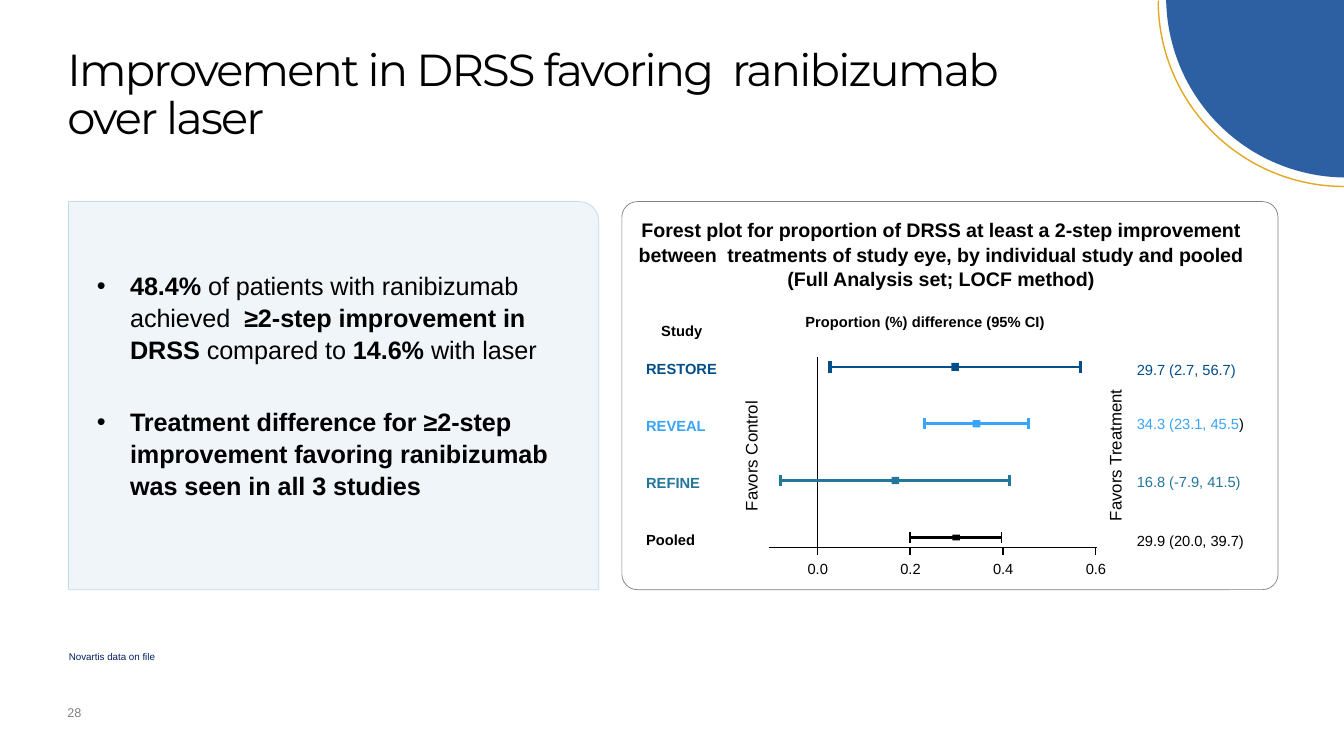
from pptx import Presentation
from pptx.dml.color import RGBColor
from pptx.enum.shapes import MSO_CONNECTOR, MSO_SHAPE
from pptx.enum.text import MSO_ANCHOR, PP_ALIGN
from pptx.oxml import parse_xml
from pptx.oxml.ns import nsdecls, qn
from pptx.util import Pt
from lxml import etree

STRAIGHT = MSO_CONNECTOR.STRAIGHT
CENTER = PP_ALIGN.CENTER
MIDDLE = MSO_ANCHOR.MIDDLE

COLORS = {
    "black": "000000", "white": "FFFFFF", "gray": "808080", "page": "7F7F7F",
    "navy": "002060", "circle": "2D5FA3", "gold": "E4A720",
    "pale": "EBF2F8", "pale line": "C2D9EA",
    "restore": "034E88", "reveal": "39A4F9", "refine": "24769B",
}
COLORS = {name: RGBColor.from_string(value) for name, value in COLORS.items()}

presentation = Presentation()
presentation.slide_width = Pt(960)
presentation.slide_height = Pt(540)
slide = presentation.slides.add_slide(presentation.slide_layouts[6])


def add_text(box, paragraphs, size, color="black", spacing=0, rotation=0,
             font_name="Arial", bold=False, frame_format=None, paragraph_format=None):
    """Each paragraph is a list of (text, format) runs; box is left, top, width, height."""
    shape = slide.shapes.add_textbox(*map(Pt, box))
    shape.rotation = rotation
    frame = shape.text_frame
    margins = dict.fromkeys(("margin_left", "margin_top", "margin_right", "margin_bottom"), 0)
    for name, value in {**margins, "word_wrap": True, **(frame_format or {})}.items():
        setattr(frame, name, value)
    for index, runs in enumerate(paragraphs):
        paragraph = frame.add_paragraph() if index else frame.paragraphs[0]
        for name, value in {"line_spacing": 1.05, **(paragraph_format or {})}.items():
            setattr(paragraph, name, value)
        for text, run_format in runs:
            run = paragraph.add_run()
            run.text = text
            font_format = {"name": font_name, "size": Pt(size), "bold": bold, **run_format}
            for name, value in font_format.items():
                setattr(run.font, name, value)
            run.font.color.rgb = COLORS[color]
            if spacing:
                run._r.get_or_add_rPr().set("spc", str(spacing))
    return frame


def add_line(x1, y1, x2, y2, color, width):
    line = slide.shapes.add_connector(STRAIGHT, Pt(x1), Pt(y1), Pt(x2), Pt(y2))
    line.line.color.rgb = COLORS[color]
    line.line.width = Pt(width)
    etree.SubElement(line._element.spPr, qn("a:effectLst"))


# Panels and corner decoration: preset, box, adjustments, fill, line, line width
BACKGROUND = [
    (MSO_SHAPE.ROUNDED_RECTANGLE, (444.2, 144, 468.7, 277.2), (0.04,), "white", "gray", 0.5),
    (MSO_SHAPE.PIE, (833, -131, 257.8, 257.8), (54, 108), "circle", None, 0),
    (MSO_SHAPE.ARC, (827.3, -132.5, 265.7, 265.7), (54, 108), None, "gold", 1),
    (MSO_SHAPE.ROUND_1_RECTANGLE, (48.9, 144, 378.8, 277.2), (0.05,), "pale", "pale line", 0.5),
]
for preset, box, adjustments, fill, line, width in BACKGROUND:
    shape = slide.shapes.add_shape(preset, *map(Pt, box))
    shape.shadow.inherit = False
    for index, value in enumerate(adjustments):
        shape.adjustments[index] = value
    if fill:
        shape.fill.solid()
        shape.fill.fore_color.rgb = COLORS[fill]
    else:
        shape.fill.background()
    if line:
        shape.line.color.rgb = COLORS[line]
        shape.line.width = Pt(width)
    else:
        shape.line.fill.background()
    if fill == "pale":
        color_element = shape._element.spPr.find(".//" + qn("a:srgbClr"))
        etree.SubElement(color_element, qn("a:alpha"), val="77000")

# Title, footnote and page number
add_text((48.2, 14.4, 695.5, 108),
         [[("Improvement in DRSS favoring  ranibizumab over laser", {})]],
         32, spacing=-130, font_name="Montserrat",
         frame_format={"vertical_anchor": MIDDLE}, paragraph_format={"line_spacing": 0.9})
add_text((49.2, 464.4, 80, 8.6), [[("Novartis data on file", {})]], 7, "navy")
add_text((48.2, 503.3, 23.8, 31), [[("28", {})]], 9, "page")

# Key findings
BOLD = {"bold": True}
findings = add_text((43.9, 192.2, 354.2, 160.6), [
    [("48.4% ", BOLD), ("of patients with ranibizumab achieved  ", {}),
     ("≥2-step improvement in DRSS ", BOLD), ("compared to ", {}),
     ("14.6% ", BOLD), ("with laser", {})],
    [("Treatment difference for ≥2-step improvement favoring ranibizumab "
      "was seen in all 3 studies", BOLD)],
], 18, spacing=-5)
for paragraph in findings.paragraphs:
    properties = paragraph._p.get_or_add_pPr()
    properties.set("marL", str(Pt(49)))
    properties.set("indent", str(Pt(-23.8)))
    properties.append(parse_xml(f'<a:buFont {nsdecls("a")} typeface="Arial"/>'))
    properties.append(parse_xml(f'<a:buChar {nsdecls("a")} char="•"/>'))
findings.paragraphs[1].space_before = Pt(29)

# Forest plot headings
add_text((450, 154.8, 444.2, 51), [
    [("Forest plot for proportion of DRSS at least a 2-step improvement "
      "between  treatments of study eye, by individual study and pooled", {})],
    [("(Full Analysis set; LOCF method)", {})],
], 14, spacing=-5, bold=True, paragraph_format={"alignment": CENTER})
add_text((575.3, 223.2, 193, 14.4), [[("Proportion (%) difference (95% CI)", {})]],
         10.5, spacing=6, bold=True)
add_text((472.3, 229, 40, 14.4), [[("Study", {})]], 10.5, spacing=10, bold=True)

# Side captions: text, centre x, centre y, length
for caption, x, y, length in [("Favors Treatment", 796.3, 319, 106.6),
                              ("Favors Control", 536.4, 320.4, 89.3)]:
    add_text((x - length / 2, y - 7.9, length, 15.8), [[(caption, {})]], 12, rotation=270)

# Axis
ZERO_X, POINTS_PER_PERCENT = 583.9, 3.312
AXIS_Y, TICK_END = 391.2, 396.2
add_line(549.4, AXIS_Y, 783.4, AXIS_Y, "black", 0.96)
for percent in range(0, 61, 20):
    x = ZERO_X + percent * POINTS_PER_PERCENT
    add_line(x, AXIS_Y if percent else 254.9, x, TICK_END, "black", 0.96)
    add_text((x - 7, 399.6, 20, 14.4), [[(f"{percent / 100:.1f}", {})]], 10.5)

# Studies: name, estimate, low, high, colour, value top, line, cap and marker sizes
STUDIES = [
    ("RESTORE", 29.7, 2.7, 56.7, "restore", 257, 1.8, 2.2, 5.8),
    ("REVEAL", 34.3, 23.1, 45.5, "reveal", 295.9, 1.8, 2.2, 5.2),
    ("REFINE", 16.8, -7.9, 41.5, "refine", 337, 1.8, 2.2, 5.2),
    ("Pooled", 29.9, 20.0, 39.7, "black", 379.4, 1.56, 1.1, 4.1),
]
FIRST_ROW_Y, ROW_PITCH, MARKER_WIDTH = 262.1, 40.6, 5.4
for row, (name, estimate, low, high, color, value_top,
          line_width, cap_width, marker_height) in enumerate(STUDIES):
    y = FIRST_ROW_Y + row * ROW_PITCH
    middle_x, low_x, high_x = (ZERO_X + value * POINTS_PER_PERCENT
                               for value in (estimate, low, high))
    add_text((461.5, y - 5.4, 60, 14.4), [[(name, {})]], 10.5, color, 5, bold=True)
    value_frame = add_text((812, value_top, 90, 14.4),
                           [[(f"{estimate} ({low}, {high}", {}), (")", {})]], 10.5, color)
    if name == "REVEAL":
        value_frame.paragraphs[0].runs[1].font.color.rgb = COLORS["black"]
    add_line(low_x, y, high_x, y, color, line_width)
    for cap_x in (low_x, high_x):
        add_line(cap_x, y - 4, cap_x, y + 4, color, cap_width)
    marker = slide.shapes.add_shape(
        MSO_SHAPE.RECTANGLE, Pt(middle_x - MARKER_WIDTH / 2), Pt(y - marker_height / 2),
        Pt(MARKER_WIDTH), Pt(marker_height))
    marker.shadow.inherit = False
    marker.fill.solid()
    marker.fill.fore_color.rgb = COLORS[color]
    marker.line.fill.background()

presentation.save("out.pptx")
